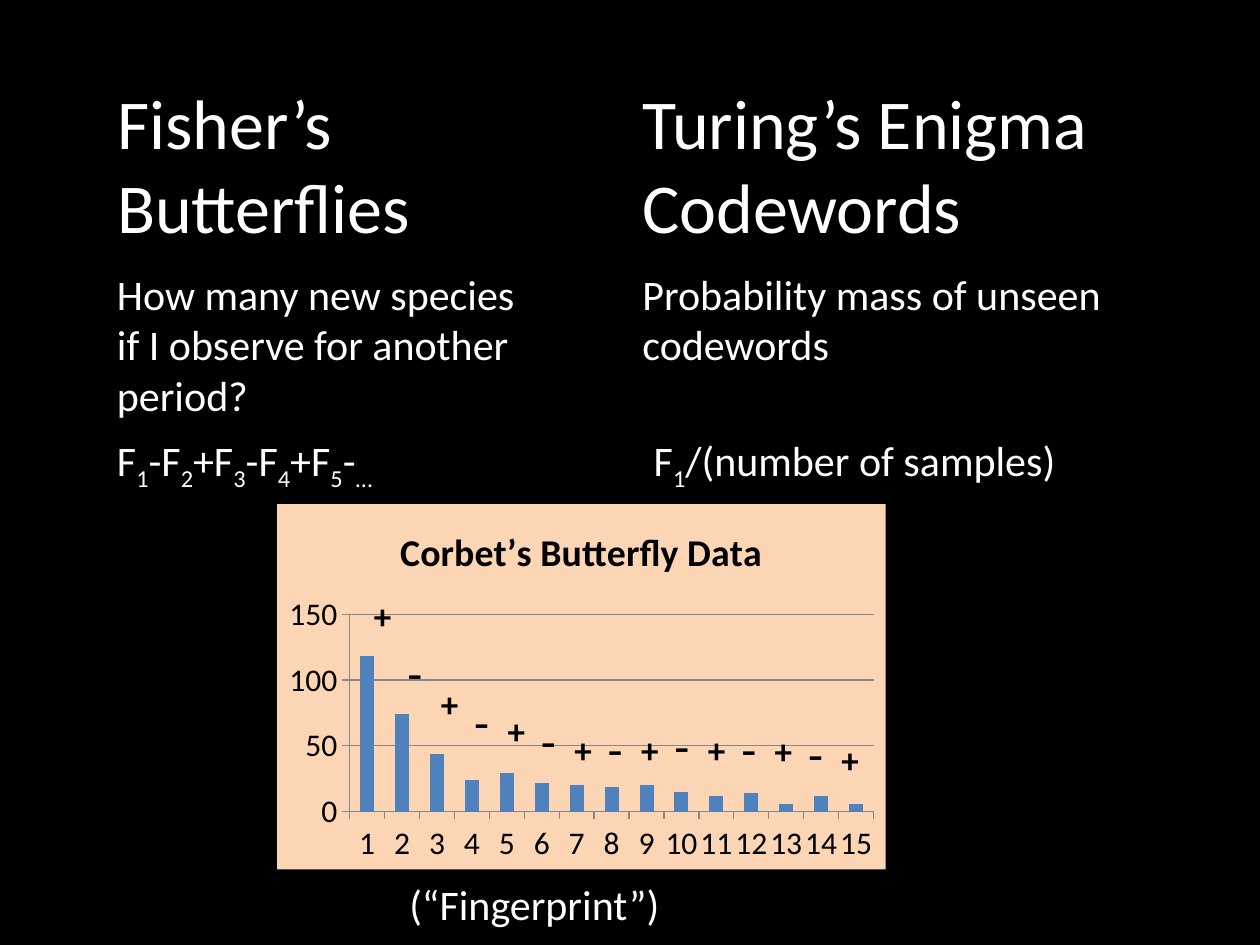
"""Build a slide comparing butterfly and codeword estimation around a bar chart."""
from lxml import etree
from pptx import Presentation
from pptx import util as u
from pptx.chart import data as chart_data
from pptx.dml import color
from pptx.enum import chart as charts, text
from pptx.oxml import ns

WHITE, BLACK, GRAY = "FFFFFF", "000000", "878787"
PEACH, BLUE = "FCD5B5", "4F81BD"
COUNTS = [118, 74, 44, 24, 29, 22, 20, 19, 20, 15, 12, 14, 6, 12, 6]
SIGN_TOPS = [4.67, 5.05, 5.37, 5.44, 5.58, 5.59, 5.73, 5.65,
             5.73, 5.63, 5.73, 5.65, 5.74, 5.69, 5.81]
SIGNS = [("+", 0.44, {"size": 20, "bold": True}), ("-", 0.57, {"size": 28})]
SIGN_LEFT, SIGN_RIGHT, SIGN_WIDTH = 2.87, 6.58, 0.33


def rgb(code):
    """Turn a hex string into a colour."""
    return color.RGBColor.from_string(code)


class Slide:
    """Hold the style and the current slide."""

    font = "Calibri"

    def __init__(self, deck, background):
        """Add a title-only slide with a plain background."""
        self.page = deck.slides.add_slide(deck.slide_layouts[5])
        self.paint(self.page.background.fill, background)

    def paint(self, fill, code):
        """Give a fill one solid colour."""
        fill.solid()
        fill.fore_color.rgb = rgb(code)

    def style(self, font, size, code=WHITE, bold=False):
        """Apply the slide font in a size, colour and weight."""
        formats = {"name": self.font, "size": u.Pt(size), "bold": bold}
        for name, value in formats.items():
            setattr(font, name, value)
        font.color.rgb = rgb(code)

    def fill_text(self, box, parts, **look):
        """Fill a box with spans, every second one a subscript."""
        formats = {"word_wrap": True, "vertical_anchor": text.MSO_ANCHOR.TOP,
                   "auto_size": text.MSO_AUTO_SIZE.SHAPE_TO_FIT_TEXT}
        for name, value in formats.items():
            setattr(box.text_frame, name, value)
        para = box.text_frame.paragraphs[0]
        para.alignment = text.PP_ALIGN.LEFT
        for index, part in enumerate(parts):
            span = para.add_run()
            span.text = part
            self.style(span.font, **look)
            if index % 2:
                span.font._element.set("baseline", "-25000")

    def title(self, place, words, **look):
        """Move the title placeholder and fill it."""
        box = self.page.shapes.title
        for name, value in zip(("left", "top", "width", "height"), place):
            setattr(box, name, u.Inches(value))
        self.fill_text(box, [words], **look)

    def label(self, place, *parts, **look):
        """Add a text box."""
        box = self.page.shapes.add_textbox(*map(u.Inches, place))
        self.fill_text(box, parts, **look)

    def columns(self, place, heading, counts):
        """Add a column chart on a coloured panel."""
        data = chart_data.CategoryChartData()
        data.categories = [str(n) for n in range(1, len(counts) + 1)]
        data.add_series("Series 1", counts)
        chart = self.page.shapes.add_chart(
            charts.XL_CHART_TYPE.COLUMN_CLUSTERED, *map(u.Inches, place), data).chart
        self.style(chart.font, 18, BLACK)
        chart.has_legend = False
        chart.has_title = True
        span = chart.chart_title.text_frame.paragraphs[0].add_run()
        span.text = heading
        self.style(span.font, 21.6, BLACK, True)

        plot = chart.plots[0]
        plot.gap_width = 150
        plot.vary_by_categories = False
        self.paint(plot.series[0].format.fill, BLUE)
        for axis in (chart.category_axis, chart.value_axis):
            axis.major_tick_mark = charts.XL_TICK_MARK.OUTSIDE
            self.rule(axis.format.line)
        scale = {"minimum_scale": 0, "maximum_scale": 150, "major_unit": 50,
                 "has_major_gridlines": True}
        for name, value in scale.items():
            setattr(chart.value_axis, name, value)
        self.rule(chart.value_axis.major_gridlines.format.line)
        self.panel(chart, PEACH)

    def rule(self, line):
        """Draw an axis or grid line thin and gray."""
        line.width = u.Pt(0.75)
        line.color.rgb = rgb(GRAY)

    def panel(self, chart, code):
        """Fill the chart area without an outline."""
        area = etree.Element(ns.qn("c:spPr"))
        fill = etree.SubElement(area, ns.qn("a:solidFill"))
        etree.SubElement(fill, ns.qn("a:srgbClr"), val=code)
        line = etree.SubElement(area, ns.qn("a:ln"))
        etree.SubElement(line, ns.qn("a:noFill"))
        chart._chartSpace.find(ns.qn("c:chart")).addnext(area)


def main():
    """Compose the slide and save it."""
    deck = Presentation()
    deck.slide_width, deck.slide_height = u.Inches(10), u.Inches(7.5)
    slide = Slide(deck, BLACK)

    slide.title((0.83, 0.58, 3.17, 1.45), "Fisher’s Butterflies", size=40)
    slide.label((5, 0.58, 4.67, 1.45), "Turing’s Enigma Codewords", size=40)
    slide.label((0.83, 2.08, 3.42, 1.31),
                "How many new species if I observe for another period?", size=24)
    slide.label((5, 2.08, 4.42, 0.91), "Probability mass of unseen codewords", size=24)
    slide.label((0.83, 3.4, 3.65, 0.5), "F", "1", "-F", "2", "+F", "3", "-F", "4",
                "+F", "5", "-", "…", size=24)
    slide.label((5.09, 3.4, 3.83, 0.5), "F", "1", "/(number of samples)", size=24)

    slide.columns((2.2, 4, 4.83, 2.9), "Corbet’s Butterfly Data", COUNTS)
    step = (SIGN_RIGHT - SIGN_LEFT) / (len(SIGN_TOPS) - 1)
    for index, top in enumerate(SIGN_TOPS):
        sign, height, look = SIGNS[index % 2]
        left = SIGN_LEFT + index * step
        slide.label((left, top, SIGN_WIDTH, height), sign, code=BLACK, **look)
    slide.label((3.15, 6.92, 2.89, 0.5), "(“Fingerprint”)", size=24)

    deck.save("out.pptx")


if __name__ == "__main__":
    main()
